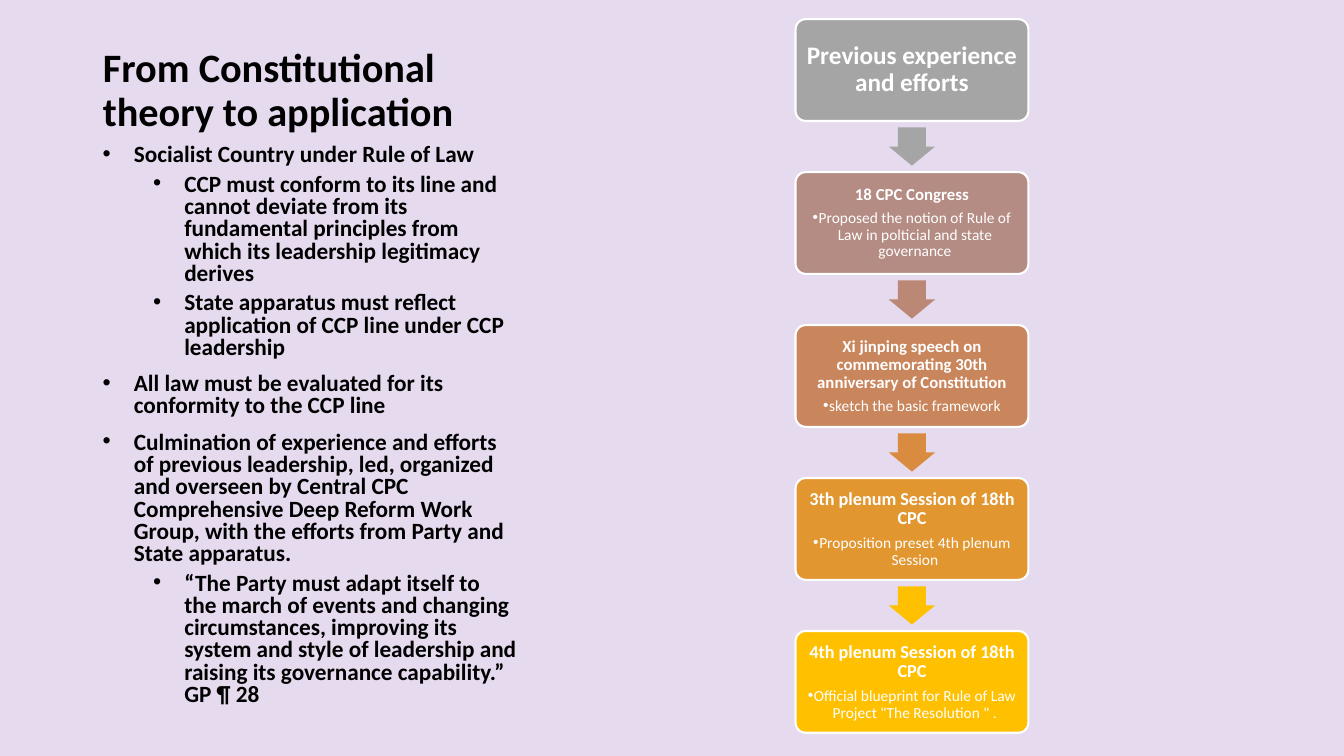
from dataclasses import dataclass

from lxml.etree import SubElement
from pptx import Presentation
from pptx.dml.color import RGBColor
from pptx.enum.shapes import MSO_SHAPE
from pptx.enum.text import MSO_ANCHOR, MSO_AUTO_SIZE, PP_ALIGN
from pptx.oxml.ns import qn
from pptx.util import Inches, Pt

TITLE = "From Constitutional theory to application"

# (indent level, text)
POINTS = [
    (0, "Socialist Country under Rule of Law"),
    (1, "CCP must conform to its line and cannot deviate from its fundamental principles "
        "from which its leadership legitimacy derives"),
    (1, "State apparatus must reflect application of CCP line under CCP leadership"),
    (0, "All law must be evaluated for its conformity to the CCP line"),
    (0, "Culmination of experience and efforts of previous leadership, led, organized and "
        "overseen by Central CPC Comprehensive Deep Reform Work Group, with the efforts "
        "from Party and State apparatus."),
    (1, "“The Party must adapt itself to the march of events and changing circumstances, "
        "improving its system and style of leadership and raising its governance "
        "capability.” GP ¶ 28"),
]

# (heading, heading size, detail, inset)
STAGES = [
    ("Previous experience and efforts", 18, None, 0.07),
    ("18 CPC Congress", 12,
     "Proposed the notion of Rule of Law in polticial and state governance", 0.05),
    ("Xi jinping speech on commemorating 30th anniversary of Constitution", 12,
     "sketch the basic framework", 0.05),
    ("3th plenum Session of 18th CPC", 13, "Proposition preset 4th plenum Session", 0.05),
    ("4th plenum Session of 18th CPC", 13,
     'Official blueprint for Rule of Law Project "The Resolution " .', 0.05),
]


@dataclass(frozen=True)
class Theme:
    font: str = "Calibri"
    background: str = "E5DAEE"
    ink: str = "000000"
    white: str = "FFFFFF"
    stages: tuple = ("A5A5A5", "B48C83", "C9855C", "E19630", "FFC000")
    arrows: tuple = ("A5A5A5", "BB8876", "D98C3F", "FFC000")
    title_size: float = 28.8
    point_size: float = 16.6
    detail_size: float = 11


THEME = Theme()

COLUMN_LEFT, COLUMN_WIDTH = 0.92, 4.3
STAGE_LEFT, STAGE_WIDTH, STAGE_HEIGHT = 7.89, 2.31, 1.01
FIRST_TOP, LAST_TOP = 0.19, 6.26
STAGE_STEP = (LAST_TOP - FIRST_TOP) / (len(STAGES) - 1)
ARROW_WIDTH, ARROW_HEIGHT = 0.46, 0.38


def color(value):
    return RGBColor.from_string(value)


def write(para, text, size, ink, bold=True, align=None, spacing=0.9,
          before=0, after=0, margin=0, hanging=0):
    """Fill a paragraph; a hanging indent above zero gives it a bullet."""
    if hanging:
        properties = para._p.get_or_add_pPr()
        properties.set("marL", str(Inches(margin)))
        properties.set("indent", str(-Inches(hanging)))
        SubElement(properties, qn("a:buFont"), typeface="Arial")
        SubElement(properties, qn("a:buChar"), char="•")
    para.alignment = align
    para.line_spacing = spacing
    para.space_before, para.space_after = Pt(before), Pt(after)
    span = para.add_run()
    span.text = text
    span.font.name, span.font.size, span.font.bold = THEME.font, Pt(size), bold
    span.font.color.rgb = color(ink)


def add_solid(page, kind, left, top, width, height, fill, adjustments):
    shape = page.shapes.add_shape(kind, Inches(left), Inches(top), Inches(width), Inches(height))
    shape.shadow.inherit = False
    shape.fill.solid()
    shape.fill.fore_color.rgb = color(fill)
    shape.line.fill.background()
    for index, value in enumerate(adjustments):
        shape.adjustments[index] = value
    return shape


def add_title(page):
    title = page.shapes.title
    title.left, title.top = Inches(COLUMN_LEFT), Inches(0.5)
    title.width, title.height = Inches(COLUMN_WIDTH), Inches(0.89)
    frame = title.text_frame
    frame.auto_size = MSO_AUTO_SIZE.NONE
    frame.word_wrap = True
    frame.vertical_anchor = MSO_ANCHOR.BOTTOM
    write(frame.paragraphs[0], TITLE, THEME.title_size, THEME.ink, align=PP_ALIGN.LEFT)


def add_points(page):
    box = page.shapes.add_textbox(Inches(COLUMN_LEFT), Inches(1.39),
                                  Inches(COLUMN_WIDTH), Inches(5.89))
    frame = box.text_frame
    frame.word_wrap = True
    for index, (level, text) in enumerate(POINTS):
        para = frame.add_paragraph() if index else frame.paragraphs[0]
        para.level = level
        before = (10, 5)[level] if index else 0
        write(para, text, THEME.point_size, THEME.ink, spacing=0.8, before=before,
              margin=0.31 + 0.5 * level, hanging=0.31)


def add_stage(page, top, fill, heading, size, detail, inset):
    box = add_solid(page, MSO_SHAPE.ROUNDED_RECTANGLE, STAGE_LEFT, top,
                    STAGE_WIDTH, STAGE_HEIGHT, fill, [0.1])
    box.line.color.rgb = color(THEME.white)
    box.line.width = Pt(1.5)
    frame = box.text_frame
    frame.word_wrap = True
    frame.vertical_anchor = MSO_ANCHOR.MIDDLE
    frame.margin_left = frame.margin_right = Inches(inset)
    frame.margin_top = frame.margin_bottom = Inches(inset)
    write(frame.paragraphs[0], heading, size, THEME.white,
          align=PP_ALIGN.CENTER, after=size * 0.35)
    if detail:
        para = frame.add_paragraph()
        para.level = 1
        write(para, detail, THEME.detail_size, THEME.white, bold=False,
              align=PP_ALIGN.CENTER, after=THEME.detail_size * 0.15,
              margin=0.06, hanging=0.06)


def add_flow(page):
    arrow_left = STAGE_LEFT + (STAGE_WIDTH - ARROW_WIDTH) / 2
    arrow_offset = (STAGE_STEP + STAGE_HEIGHT - ARROW_HEIGHT) / 2
    for index, stage in enumerate(STAGES):
        top = FIRST_TOP + index * STAGE_STEP
        add_stage(page, top, THEME.stages[index], *stage)
        if index < len(THEME.arrows):
            add_solid(page, MSO_SHAPE.DOWN_ARROW, arrow_left, top + arrow_offset,
                      ARROW_WIDTH, ARROW_HEIGHT, THEME.arrows[index], [0.6, 0.5])


def main():
    deck = Presentation()
    deck.slide_width, deck.slide_height = Inches(13.33), Inches(7.5)
    page = deck.slides.add_slide(deck.slide_layouts[5])
    page.background.fill.solid()
    page.background.fill.fore_color.rgb = color(THEME.background)
    add_title(page)
    add_flow(page)
    add_points(page)
    deck.save("out.pptx")


if __name__ == "__main__":
    main()
